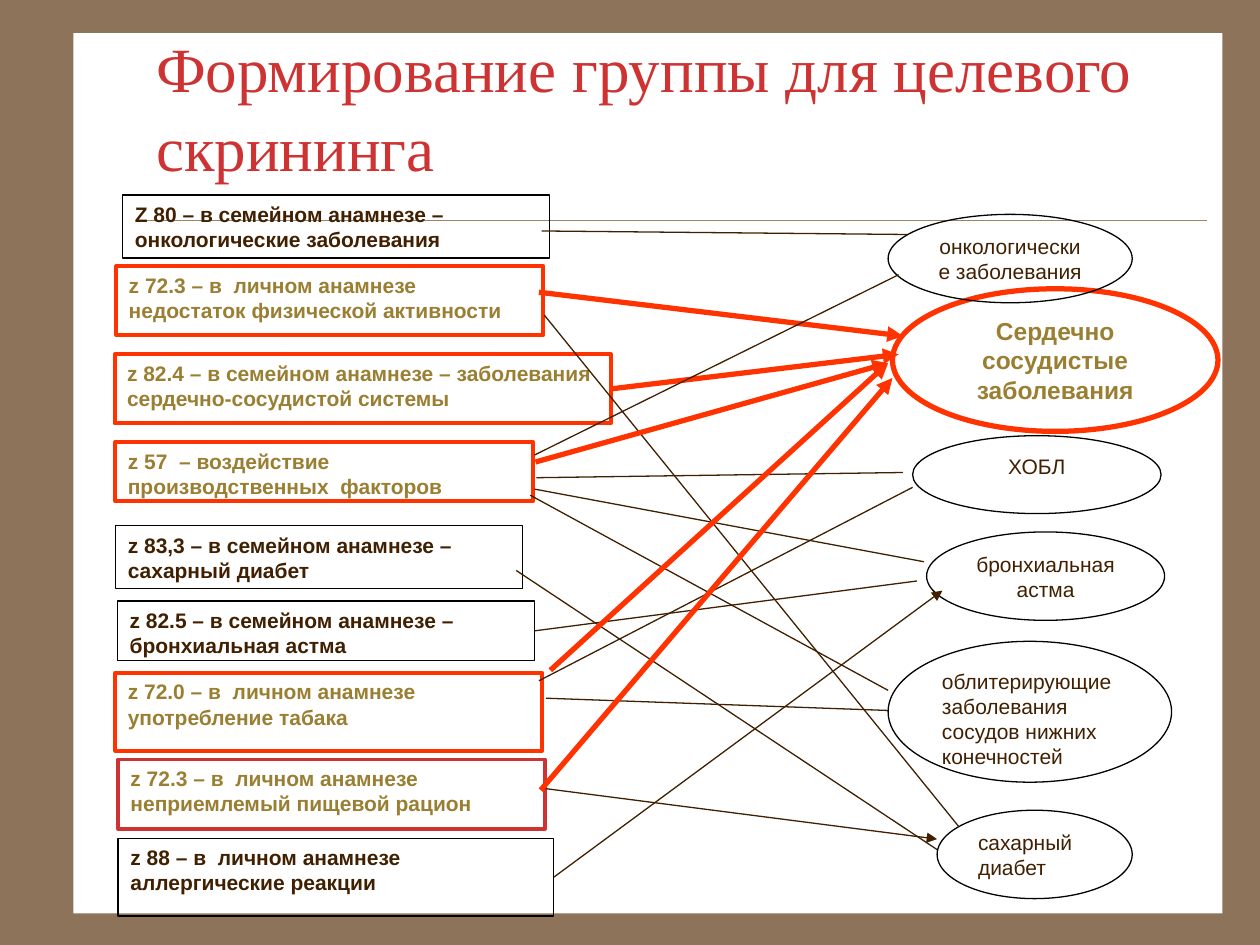
"""Build the slide on forming groups for targeted screening."""
from lxml import etree
from pptx import Presentation
from pptx.dml.color import RGBColor
from pptx.enum.shapes import MSO_CONNECTOR, MSO_SHAPE
from pptx.enum.text import MSO_ANCHOR, PP_ALIGN
from pptx.oxml.ns import qn
from pptx.util import Pt

BROWN, GOLD, RED, CRIMSON, BLACK = "402000", "9A7F32", "FF3300", "CD3333", "000000"
RECT, OVAL = MSO_SHAPE.RECTANGLE, MSO_SHAPE.OVAL
LEFT, CENTER = PP_ALIGN.LEFT, PP_ALIGN.CENTER


def rgb(value):
    return RGBColor.from_string(value)


def add_line(x1, y1, x2, y2, color, width, arrow=False):
    cn = s.shapes.add_connector(MSO_CONNECTOR.STRAIGHT, Pt(x1), Pt(y1), Pt(x2), Pt(y2))
    cn.line.color.rgb = rgb(color)
    cn.line.width = Pt(width)
    if arrow:
        etree.SubElement(cn.line._get_or_add_ln(), qn("a:tailEnd"), type="triangle")
    etree.SubElement(cn._element.spPr, qn("a:effectLst"))
    return cn


prs = Presentation()
prs.slide_width, prs.slide_height = Pt(720), Pt(540)
s = prs.slides.add_slide(prs.slide_layouts[5])
s.background.fill.solid()
s.background.fill.fore_color.rgb = rgb("8C735A")

panel = s.shapes.add_shape(RECT, Pt(42), Pt(19), Pt(656.5), Pt(503))
panel.shadow.inherit = False
panel.fill.solid()
panel.fill.fore_color.rgb = rgb("FFFFFF")
panel.line.fill.background()
rule = add_line(80, 126, 690, 126, "A08366", 0.25)

title = s.shapes.title
rule._element.addnext(title._element)
title.left, title.top, title.width, title.height = Pt(82), Pt(26), Pt(590), Pt(68)
tf = title.text_frame
tf.text = "Формирование группы для целевого скрининга"
tf.word_wrap = True
tf.vertical_anchor = MSO_ANCHOR.MIDDLE
p = tf.paragraphs[0]
p.alignment = LEFT
p.line_spacing = 1.05
p.font.name, p.font.size = "Times New Roman", Pt(36)
p.font.color.rgb = rgb(CRIMSON)

plain = (BLACK, 0.75, BROWN, 12, True, LEFT)
marked = (RED, 2.25, GOLD, 12, True, LEFT)
food = (CRIMSON, 2.25, GOLD, 12, True, LEFT)
disease = (BLACK, 0.75, BROWN, 12, False, CENTER)
disease_left = (BLACK, 0.75, BROWN, 12, False, LEFT)
heart = (RED, 3, GOLD, 14, True, CENTER)

labels = [
    ("z80", RECT, 70, 111.5, 244, 36, plain,
     "Z 80 – в семейном анамнезе – онкологические заболевания"),
    ("activity", RECT, 66.5, 152, 244, 39.5, marked,
     "z 72.3 – в  личном анамнезе недостаток физической активности"),
    ("z82.4", RECT, 65.5, 202.5, 283.5, 39.5, marked,
     "z 82.4 – в семейном анамнезе – заболевания сердечно-сосудистой системы"),
    ("z57", RECT, 66, 252.5, 238.5, 34, marked,
     "z 57  – воздействие производственных  факторов"),
    ("z83.3", RECT, 66, 300.5, 232.5, 36, plain,
     "z 83,3 – в семейном анамнезе –  сахарный диабет"),
    ("z82.5", RECT, 67, 343.5, 238.5, 34, plain,
     "z 82.5 – в семейном анамнезе –  бронхиальная астма"),
    ("z72.0", RECT, 66, 384.5, 244, 44.5, marked,
     "z 72.0 – в  личном анамнезе употребление табака"),
    ("diet", RECT, 67.5, 434, 244, 39.5, food,
     "z 72.3 – в  личном анамнезе неприемлемый пищевой рацион"),
    ("z88", RECT, 67.5, 479, 249, 44.5, plain,
     "z 88 – в  личном анамнезе аллергические реакции"),
    ("heart", OVAL, 510, 165, 186, 81.5, heart, "Сердечно сосудистые заболевания"),
    ("cancer", OVAL, 507.5, 122.5, 139.5, 50.5, disease, "онкологические заболевания"),
    ("copd", OVAL, 521.5, 249, 142, 44.5, disease, "ХОБЛ"),
    ("asthma", OVAL, 529.5, 304, 136, 50.5, disease, "бронхиальная астма"),
    ("vessels", OVAL, 507.5, 366.5, 162, 80.5, disease_left,
     "облитерирующие заболевания сосудов нижних конечностей"),
    ("diabetes", OVAL, 535.5, 463, 111.5, 50.5, disease_left, "сахарный диабет"),
]
boxes = {}
for name, kind, x, y, w, h, style, text in labels:
    outline, width, color, size, bold, align = style
    sp = s.shapes.add_shape(kind, Pt(x), Pt(y), Pt(w), Pt(h))
    sp.shadow.inherit = False
    sp.fill.background()
    sp.line.color.rgb = rgb(outline)
    sp.line.width = Pt(width)
    tf = sp.text_frame
    tf.text = text
    tf.word_wrap = True
    tf.vertical_anchor = MSO_ANCHOR.TOP
    p = tf.paragraphs[0]
    p.alignment = align
    p.font.name, p.font.size, p.font.bold = "Arial", Pt(size), bold
    p.font.color.rgb = rgb(color)
    boxes[name] = sp

thin, thin_arrow, thick_arrow = (BROWN, 0.75), (BROWN, 0.75, True), (RED, 3, True)
links = [
    (309.5, 132, 518.5, 134, thin, None),
    (308, 167, 516, 192, thick_arrow, None),
    (311, 180, 548, 472.5, thin, None),
    (349, 222, 513.5, 202.5, thick_arrow, "z82.4"),
    (306, 264, 507.5, 207.5, thick_arrow, None),
    (306.5, 273, 516, 270, thin, None),
    (305.5, 260, 513.5, 157, thin, None),
    (305.5, 279.5, 528, 321, thin, None),
    (303, 283, 507.5, 394.5, thin, None),
    (295, 326, 535.5, 485.5, thin, None),
    (305.5, 360.5, 524, 332, thin, "z82.5"),
    (312, 399, 507.5, 406, thin, None),
    (308, 389, 521.5, 278.5, thin, None),
    (314.5, 383, 507.5, 207.5, thick_arrow, None),
    (310.5, 450.5, 535.5, 479.5, thin_arrow, None),
    (309, 451.5, 510, 216, thick_arrow, None),
    (316.5, 501, 538.5, 337.5, thin_arrow, "z88"),
]
for x1, y1, x2, y2, style, source in links:
    cn = add_line(x1, y1, x2, y2, *style)
    if source:
        cn.begin_connect(boxes[source], 3)

prs.save("out.pptx")
